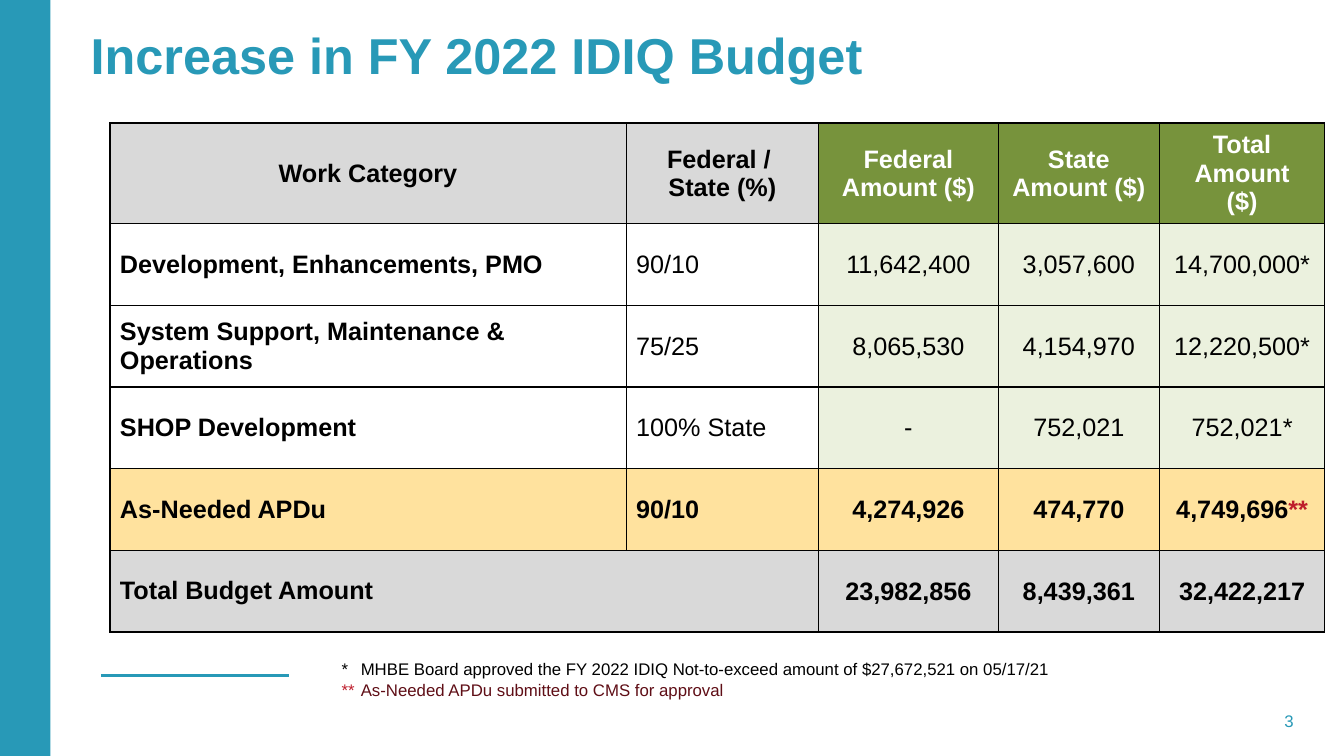
from pptx import Presentation, util as u
from pptx.dml.color import RGBColor
from pptx.enum import shapes, text
from pptx.oxml import parse_xml
from pptx.oxml.ns import nsdecls, qn
from lxml import etree

TEAL, BLACK, WHITE, RED, MAROON = "2899B7", "000000", "FFFFFF", "BE1E2C", "5F0E16"
GREY, GREEN, PALE_GREEN, YELLOW = "D9D9D9", "77933C", "EBF1DE", "FFE29E"
WIDTH, HEIGHT = 13.33, 7.5

COLUMNS = [5.12, 1.91, 1.78, 1.6, 1.64]
ROWS = [0.88] + [0.81] * 5
BUDGET = [
    ["Work Category", "Federal / \nState (%)", "Federal Amount ($)",
     "State Amount ($)", "Total Amount\n($)"],
    ["Development, Enhancements, PMO", "90/10", "11,642,400", "3,057,600", "14,700,000*"],
    ["System Support, Maintenance & Operations", "75/25", "8,065,530", "4,154,970", "12,220,500*"],
    ["SHOP Development", "100% State", "-", "752,021", "752,021*"],
    ["As-Needed APDu", "90/10", "4,274,926", "474,770", "4,749,696**"],
    ["Total Budget Amount", "", "23,982,856", "8,439,361", "32,422,217"],
]
# (label columns, amount columns) for each row
FILLS = [(GREY, GREEN)] + [(WHITE, PALE_GREEN)] * 3 + [(YELLOW, YELLOW), (GREY, GREY)]


def rgb(color):
    return RGBColor.from_string(color)


def inches(*lengths):
    return [u.Inches(length) for length in lengths]


def style(item, size, color, bold=False):
    """Format the font of a run or paragraph."""
    font = item.font
    font.name, font.size, font.bold = "Arial", u.Pt(size), bold
    font.color.rgb = rgb(color)


def set_insets(target, left, top, right, bottom):
    (target.margin_left, target.margin_top,
     target.margin_right, target.margin_bottom) = inches(left, top, right, bottom)


def add_text_box(s, box, insets):
    tf = s.shapes.add_textbox(*inches(*box)).text_frame
    tf.word_wrap = True
    set_insets(tf, *insets)
    return tf


def add_side_band(s, box):
    sp = s.shapes.add_shape(shapes.MSO_SHAPE.RECTANGLE, *inches(*box))
    sp.shadow.inherit = False
    sp.fill.solid()
    sp.fill.fore_color.rgb = rgb(TEAL)
    sp.line.fill.background()


def add_rule(s, left, top, width):
    line = s.shapes.add_connector(shapes.MSO_CONNECTOR.STRAIGHT,
                                  *inches(left, top, left + width, top))
    line.line.color.rgb = rgb(TEAL)
    line.line.width = u.Pt(2)
    etree.SubElement(line._element.spPr, qn("a:effectLst"))


def set_title(s, box, words):
    sp = s.shapes.title
    sp.left, sp.top, sp.width, sp.height = inches(*box)
    tf = sp.text_frame
    tf.text = words
    tf.word_wrap = True
    tf.auto_size = text.MSO_AUTO_SIZE.NONE
    tf.vertical_anchor = text.MSO_ANCHOR.BOTTOM
    set_insets(tf, 0, 0, 0, 0)
    p = tf.paragraphs[0]
    p.alignment = text.PP_ALIGN.LEFT
    p.line_spacing = 0.9
    style(p.runs[0], 36, TEAL, True)


def add_page_number(s, box, number):
    tf = add_text_box(s, box, (0, 0, 0, 0))
    tf.text = number
    tf.vertical_anchor = text.MSO_ANCHOR.MIDDLE
    p = tf.paragraphs[0]
    p.alignment = text.PP_ALIGN.RIGHT
    style(p.runs[0], 12, TEAL)


def set_borders(cell):
    tc_pr = cell._tc.get_or_add_tcPr()
    for i, side in enumerate(("lnL", "lnR", "lnT", "lnB")):
        tc_pr.insert(i, parse_xml(
            f'<a:{side} {nsdecls("a")} w="12700"><a:solidFill>'
            f'<a:srgbClr val="{BLACK}"/></a:solidFill></a:{side}>'))


def fill_cell(cell, row, col):
    header, amount, strong = row == 0, col >= 2, row in (0, 4, 5)
    cell.fill.solid()
    cell.fill.fore_color.rgb = rgb(FILLS[row][amount])
    set_borders(cell)
    cell.vertical_anchor = text.MSO_ANCHOR.MIDDLE
    tight = amount and row >= 4
    set_insets(cell, *((0.01, 0.01, 0.01, 0) if tight else (0.1, 0.05, 0.1, 0.05)))
    words = BUDGET[row][col]
    starred = words.endswith("**")
    cell.text_frame.text = words.removesuffix("**")
    for p in cell.text_frame.paragraphs:
        p.alignment = text.PP_ALIGN.CENTER if header or amount else text.PP_ALIGN.LEFT
        if starred:
            p.add_run().text = "**"
        for r in p.runs:
            color = RED if r.text == "**" else WHITE if header and amount else BLACK
            style(r, 18, color, strong or col == 0)


def add_budget_table(s, left, top):
    frame = s.shapes.add_table(len(ROWS), len(COLUMNS),
                               *inches(left, top, sum(COLUMNS), sum(ROWS)))
    table = frame.table
    for column, width in zip(table.columns, COLUMNS):
        column.width = u.Inches(width)
    for row, height in zip(table.rows, ROWS):
        row.height = u.Inches(height)
    for row in range(len(ROWS)):
        for col in range(len(COLUMNS)):
            fill_cell(table.cell(row, col), row, col)
    table.cell(5, 0).merge(table.cell(5, 1))


def add_footnotes(s, box):
    """Place the notes with their marks hanging to the left."""
    tf = add_text_box(s, box, (0.1, 0.05, 0.1, 0.05))
    notes = [
        ("*", BLACK, "MHBE Board approved the FY 2022 IDIQ Not-to-exceed amount of "
                     "$27,672,521 on 05/17/21", BLACK),
        ("**", RED, "As-Needed APDu submitted to CMS for approval", MAROON),
    ]
    for i, (mark, mark_color, words, color) in enumerate(notes):
        p = tf.add_paragraph() if i else tf.paragraphs[0]
        p_pr = p._p.get_or_add_pPr()
        p_pr.set("marL", str(u.Inches(0.19)))
        p_pr.set("indent", str(-u.Inches(0.19)))
        for part, part_color in ((mark + "\t", mark_color), (words, color)):
            r = p.add_run()
            r.text = part
            style(r, 12, part_color)


def build_budget_slide(prs):
    s = prs.slides.add_slide(prs.slide_layouts[5])
    add_rule(s, 1, 6.7, 1.87)
    add_side_band(s, (0, 0, 0.5, HEIGHT))
    set_title(s, (0.9, 0.05, 11.83, 0.8), "Increase in FY 2022 IDIQ Budget")
    add_page_number(s, (9.42, 6.95, 3.41, 0.4), "3")
    add_budget_table(s, 1.09, 1.22)
    add_footnotes(s, (3.29, 6.49, 9.16, 0.5))


def main():
    prs = Presentation()
    prs.slide_width, prs.slide_height = inches(WIDTH, HEIGHT)
    build_budget_slide(prs)
    prs.save("out.pptx")


if __name__ == "__main__":
    main()
